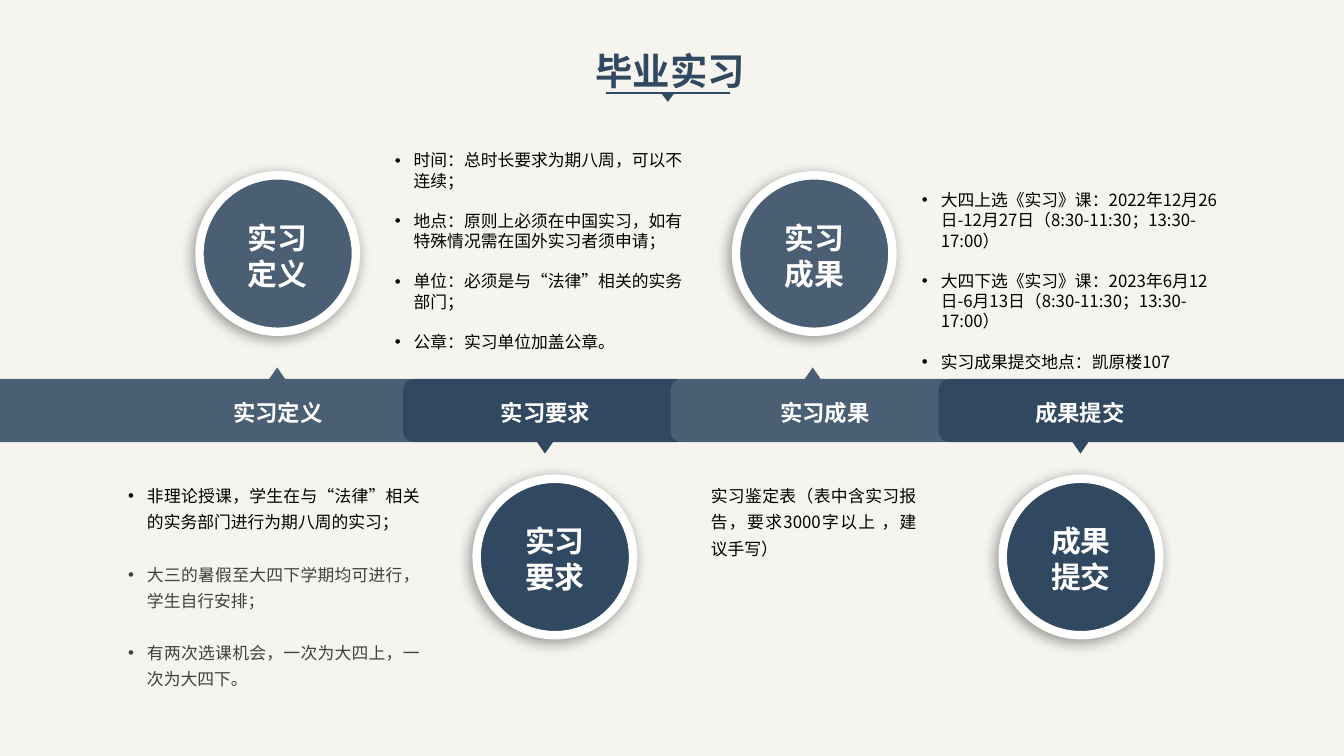
import lxml.etree
import pptx
import pptx.dml.color
import pptx.enum.shapes
import pptx.enum.text
import pptx.oxml
import pptx.oxml.ns
import pptx.util

RGB = pptx.dml.color.RGBColor
SHAPE = pptx.enum.shapes.MSO_SHAPE
ALIGN = pptx.enum.text.PP_ALIGN
Pt = pptx.util.Pt
qn = pptx.oxml.ns.qn

CREAM = RGB(0xF5, 0xF4, 0xEF)
NAVY = RGB(0x30, 0x48, 0x60)
SLATE = RGB(0x4A, 0x5F, 0x74)
WHITE = RGB(0xFF, 0xFF, 0xFF)
BLACK = RGB(0, 0, 0)
GREY = RGB(0x40, 0x40, 0x40)

SHADOW = (
    '<a:effectLst %s><a:outerShdw blurRad="127000" dist="38100" dir="8100000">'
    '<a:srgbClr val="000000"><a:alpha val="40000"/></a:srgbClr>'
    '</a:outerShdw></a:effectLst>' % pptx.oxml.ns.nsdecls("a")
)


def px(n):
    return pptx.util.Emu(n * 9525)


class Deck:
    font = "Noto Sans CJK SC"
    bullet_indent = px(18)

    def __init__(self):
        self.prs = pptx.Presentation()
        self.prs.slide_width, self.prs.slide_height = px(1280), px(720)
        self.slide = self.prs.slides.add_slide(self.prs.slide_layouts[6])
        fill = self.slide.background.fill
        fill.solid()
        fill.fore_color.rgb = CREAM

    def shape(self, kind, x, y, w, h, color, rotation=0):
        sp = self.slide.shapes.add_shape(kind, px(x), px(y), px(w), px(h))
        sp.shadow.inherit = False
        sp.fill.solid()
        sp.fill.fore_color.rgb = color
        sp.line.fill.background()
        sp.rotation = rotation
        return sp

    def circle(self, x, y, size, color):
        """Disc with a white rim and a soft shadow to the lower left."""
        sp = self.shape(SHAPE.OVAL, x, y, size, size, color)
        sp.line.color.rgb = WHITE
        sp.line.width = Pt(6)
        spPr = sp._element.spPr
        spPr.replace(spPr.find(qn("a:effectLst")), pptx.oxml.parse_xml(SHADOW))

    def line(self, x1, y1, x2, y2, color, width):
        cxn = self.slide.shapes.add_connector(
            pptx.enum.shapes.MSO_CONNECTOR.STRAIGHT, px(x1), px(y1), px(x2), px(y2))
        cxn.line.color.rgb = color
        cxn.line.width = Pt(width)
        lxml.etree.SubElement(cxn._element.spPr, qn("a:effectLst"))

    def text(self, x, y, w, h, items, size=12, color=BLACK, bold=False,
             align=ALIGN.LEFT, leading=None, bullets=False):
        """Text box; items are (text, colour) pairs or plain strings."""
        sp = self.slide.shapes.add_textbox(px(x), px(y), px(w), px(h))
        tf = sp.text_frame
        frame = {"word_wrap": True, "margin_left": 0, "margin_right": 0,
                 "margin_top": 0, "margin_bottom": 0}
        for name, value in frame.items():
            setattr(tf, name, value)
        leading = Pt(leading or 1.2 * size)
        for i, item in enumerate(items):
            words, ink = item if isinstance(item, tuple) else (item, color)
            p = tf.paragraphs[0] if i == 0 else tf.add_paragraph()
            layout = {"alignment": align, "line_spacing": leading,
                      "space_before": leading if i else Pt(0)}
            for name, value in layout.items():
                setattr(p, name, value)
            if bullets:
                self.bullet(p)
            r = p.add_run()
            r.text = words
            for name, value in {"size": Pt(size), "bold": bold, "name": self.font}.items():
                setattr(r.font, name, value)
            r.font.color.rgb = ink
            ea = lxml.etree.SubElement(r._r.get_or_add_rPr(), qn("a:ea"))
            ea.set("typeface", self.font)

    def bullet(self, p):
        pPr = p._p.get_or_add_pPr()
        pPr.set("marL", str(self.bullet_indent))
        pPr.set("indent", str(-self.bullet_indent))
        lxml.etree.SubElement(pPr, qn("a:buFont")).set("typeface", "Arial")
        lxml.etree.SubElement(pPr, qn("a:buChar")).set("char", "•")


# heading, bar left, bar width, label left, circle left
STAGES = [
    ("实习定义", -15, 416, 181, 190),
    ("实习要求", 384, 271, 436, 454),
    ("实习成果", 639, 271, 702, 701),
    ("成果提交", 894, 401, 945, 955),
]
STAGE_STEP = 255

DEFINITION = [
    ("非理论授课，学生在与“法律”相关的实务部门进行为期八周的实习；", BLACK),
    ("大三的暑假至大四下学期均可进行，学生自行安排；", GREY),
    ("有两次选课机会，一次为大四上，一次为大四下。", GREY),
]
REQUIREMENTS = [
    "时间：总时长要求为期八周，可以不连续；",
    "地点：原则上必须在中国实习，如有特殊情况需在国外实习者须申请；",
    "单位：必须是与“法律”相关的实务部门；",
    "公章：实习单位加盖公章。",
]
RESULT = ["实习鉴定表（表中含实习报告，要求3000字以上 ，建议手写）"]
SUBMISSION = [
    "大四上选《实习》课：2022年12月26日-12月27日（8:30-11:30；13:30-17:00）",
    "大四下选《实习》课：2023年6月12日-6月13日（8:30-11:30；13:30-17:00）",
    "实习成果提交地点：凯原楼107",
]


def main():
    deck = Deck()
    deck.line(577, 89, 695, 89, NAVY, 1.5)
    deck.shape(SHAPE.ISOSCELES_TRIANGLE, 630, 89, 12, 8, NAVY, 180)
    deck.text(557, 46, 163, 43, ["毕业实习"], 26.7, NAVY, True, ALIGN.CENTER)

    for i, (heading, bar_x, bar_w, label_x, circle_x) in enumerate(STAGES):
        below = i % 2 == 1
        color = NAVY if below else SLATE
        circle_y = 456 if below else 167
        deck.shape(SHAPE.ROUNDED_RECTANGLE, bar_x, 361, bar_w, 60, color)
        deck.shape(SHAPE.ISOSCELES_TRIANGLE, 255 + STAGE_STEP * i, 419 if below else 350,
                   18, 13, color, 180 if below else 0)
        deck.circle(circle_x, circle_y, 149, color)
        deck.text(label_x, 380, 167, 26, [heading], 16, WHITE, True, ALIGN.CENTER)
        deck.text(circle_x + 35, circle_y + 42, 79, 69, [heading], 21.3, WHITE, True,
                  ALIGN.CENTER)

    deck.text(122, 457, 278, 204, DEFINITION, align=ALIGN.JUSTIFY, leading=18.7, bullets=True)
    deck.text(376, 143, 286, 194, REQUIREMENTS, bullets=True)
    deck.text(677, 457, 196, 77, RESULT, align=ALIGN.JUSTIFY, leading=18.7)
    deck.text(878, 181, 299, 175, SUBMISSION, bullets=True)
    deck.prs.save("out.pptx")


if __name__ == "__main__":
    main()
